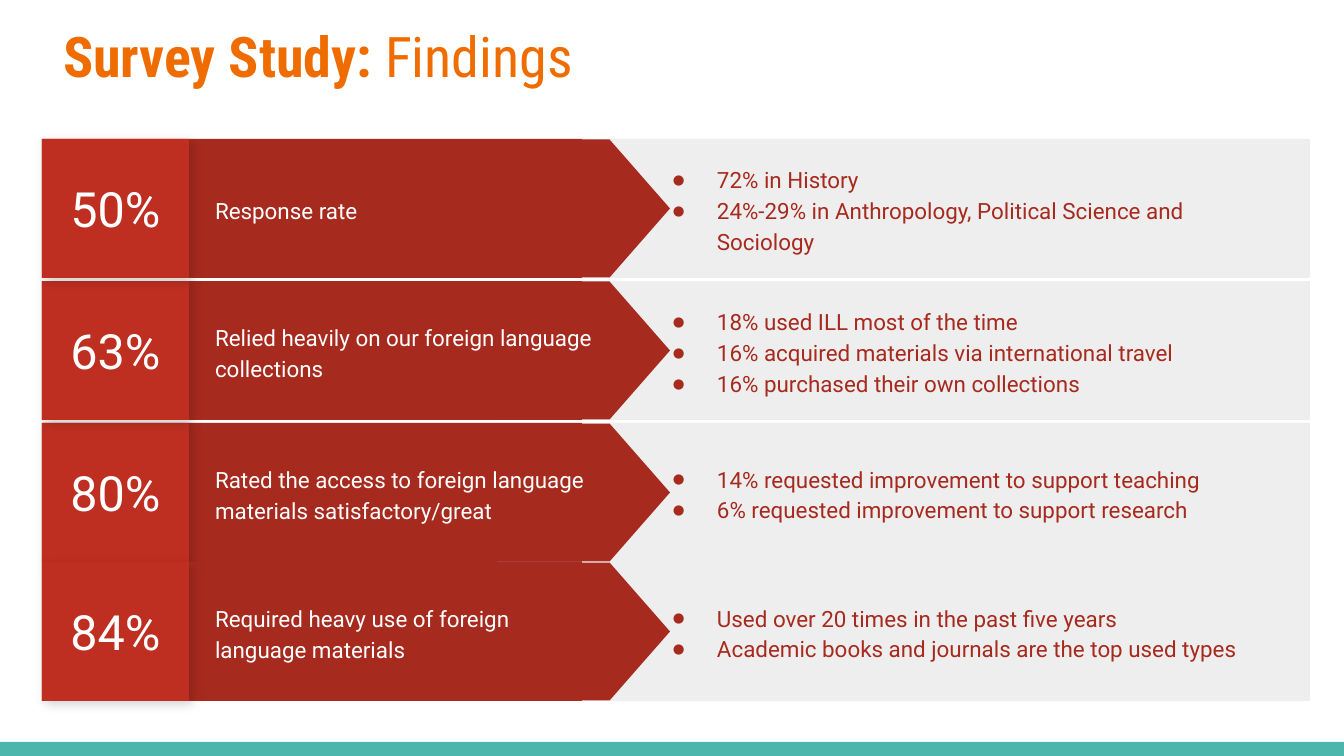
from lxml.etree import SubElement
from pptx import Presentation
from pptx.dml.color import RGBColor
from pptx.enum.shapes import MSO_SHAPE
from pptx.enum.text import MSO_ANCHOR, PP_ALIGN
from pptx.oxml.ns import qn
from pptx.util import Pt

TITLE = [("Survey Study: ", True), ("Findings", False)]
# Back to front: top edge, share, finding, details
ROWS = [
    (423, "80%", "Rated the access to foreign language materials satisfactory/great",
     ["14% requested improvement to support teaching",
      "6% requested improvement to support research"]),
    (281, "63%", "Relied heavily on our foreign language collections",
     ["18% used ILL most of the time",
      "16% acquired materials via international travel",
      "16% purchased their own collections"]),
    (139, "50%", "Response rate",
     ["72% in History",
      "24%-29% in Anthropology, Political Science and Sociology"]),
    (562, "84%", "Required heavy use of foreign language materials",
     ["Used over 20 times in the past five years",
      "Academic books and journals are the top used types"]),
]

ORANGE = RGBColor(0xEF, 0x6C, 0x00)
TEAL = RGBColor(0x4D, 0xB6, 0xAC)
GRAY = RGBColor(0xEE, 0xEE, 0xEE)
RED = RGBColor(0xA7, 0x2A, 0x1E)
BRICK = RGBColor(0xB0, 0x2C, 0x20)
BRIGHT = RGBColor(0xBE, 0x2F, 0x22)
WHITE = RGBColor(0xFF, 0xFF, 0xFF)

WIDE, HIGH = 1344, 756
ROW_H, PAD = 139, 13
ARROW_MID, ARROW_W, ARROW_LEN = 519, 138, 302


def px(n):
    return round(n * 914400 / 134.4)


def box(shapes, x, y, w, h, fill, kind=MSO_SHAPE.RECTANGLE):
    shape = shapes.add_shape(kind, px(x), px(y), px(w), px(h))
    shape.shadow.inherit = False
    shape.fill.solid()
    shape.fill.fore_color.rgb = fill
    shape.line.fill.background()
    return shape


def cast(shape):
    """Give the shape a soft shadow to the lower right."""
    effects = shape._element.spPr.find(qn("a:effectLst"))
    shade = SubElement(effects, qn("a:outerShdw"), blurRad=str(Pt(5.6)),
                       dist=str(Pt(2.2)), dir=str(45 * 60000),
                       algn="bl", rotWithShape="0")
    color = SubElement(shade, qn("a:srgbClr"), val="000000")
    SubElement(color, qn("a:alpha"), val="17000")


def frame(shape, anchor=MSO_ANCHOR.MIDDLE):
    text = shape.text_frame
    text.word_wrap = True
    text.vertical_anchor = anchor
    text.margin_left = text.margin_right = px(PAD)
    text.margin_top = text.margin_bottom = px(PAD)
    return text


def write(para, words, size, color, face="Roboto", bold=False):
    run = para.add_run()
    run.text = words
    font = run.font
    font.name, font.size, font.bold = face, Pt(size), bold
    font.color.rgb = color


def bullet(para):
    props = para._p.get_or_add_pPr()
    props.set("marL", str(px(67)))
    props.set("indent", str(px(-44)))
    tint = SubElement(props, qn("a:buClr"))
    SubElement(tint, qn("a:srgbClr"), val=str(RED))
    SubElement(props, qn("a:buSzPct"), val="60000")
    SubElement(props, qn("a:buFont"), typeface="Roboto")
    SubElement(props, qn("a:buChar"), char="●")


def lines(shapes, x, y, w, h, items, color, dots=False):
    text = frame(shapes.add_textbox(px(x), px(y), px(w), px(h)))
    for i, item in enumerate(items):
        para = text.add_paragraph() if i else text.paragraphs[0]
        para.line_spacing = 1.15
        if dots:
            bullet(para)
        write(para, item, 12, color)


def add_row(slide, top, share, finding, details):
    shapes = slide.shapes.add_group_shape().shapes
    box(shapes, 497, top, 813, ROW_H, GRAY)
    box(shapes, 189, top, 393, ROW_H, RED)
    arrow = box(shapes, ARROW_MID - ARROW_W / 2, top + (ROW_H - ARROW_LEN) / 2,
                ARROW_W, ARROW_LEN, RED, MSO_SHAPE.FLOWCHART_OFFPAGE_CONNECTOR)
    arrow.rotation = 270
    lines(shapes, 202, top + 16, 413, 108, [finding], WHITE)
    cast(box(shapes, 42, top, 147, ROW_H, BRICK))
    badge = frame(box(shapes, 42, top, 147, ROW_H, BRIGHT)).paragraphs[0]
    badge.alignment = PP_ALIGN.CENTER
    write(badge, share, 26, WHITE)
    lines(shapes, 637, top, 632, ROW_H, details, RED, dots=True)


def main():
    deck = Presentation()
    deck.slide_width, deck.slide_height = px(WIDE), px(HIGH)
    slide = deck.slides.add_slide(deck.slide_layouts[5])
    box(slide.shapes, 0, HIGH - 14, WIDE, 14, TEAL)

    title = slide.shapes.title
    title.left, title.top, title.width, title.height = map(px, (50, 9, 1253, 103))
    para = frame(title, MSO_ANCHOR.TOP).paragraphs[0]
    para.alignment = PP_ALIGN.LEFT
    for words, bold in TITLE:
        write(para, words, 30, ORANGE, "Roboto Condensed", bold)

    for row in ROWS:
        add_row(slide, *row)
    deck.save("out.pptx")


if __name__ == "__main__":
    main()
